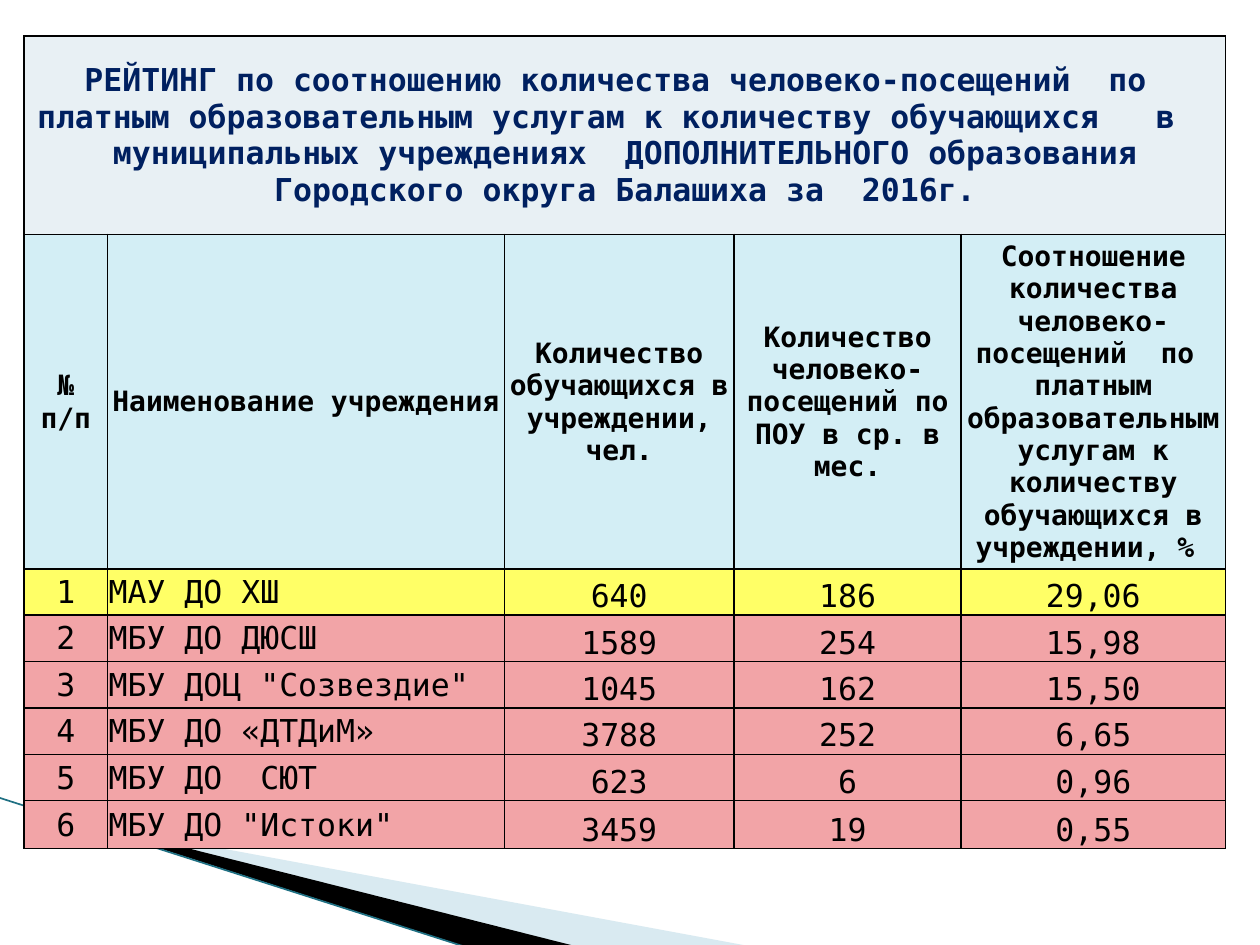
"""Builds the rating slide for paid services in supplementary education."""
from dataclasses import dataclass

from lxml import etree
from pptx import Presentation
from pptx.dml.color import RGBColor
from pptx.enum import shapes, text
from pptx.oxml import ns
from pptx.util import Emu, Inches, Pt

FONT = "DejaVu Sans Mono"
BLACK, NAVY, TEAL = "000000", "002060", "1F7083"
TITLE_FILL, HEAD_FILL, LEADER_FILL, OTHER_FILL = "E8F0F4", "D3EEF5", "FFFF66", "F2A4A7"
WIDTH, HEIGHT = Inches(10), Inches(7.5)
LEFT, TOP = 1.92, 3.8
COLUMNS = (6.6, 31.5, 18.25, 18, 21)
TITLE_ROW, HEAD_ROW, RATING_ROW, LAST_ROW = 21, 35.4, 4.91, 5.05

TITLE = ("РЕЙТИНГ по соотношению количества человеко-посещений  по  платным "
         "образовательным услугам к количеству обучающихся   в   муниципальных "
         "учреждениях  ДОПОЛНИТЕЛЬНОГО образования Городского округа Балашиха за  2016г.")
HEADINGS = (
    "№ п/п",
    "Наименование учреждения",
    "Количество обучающихся в учреждении, чел.",
    "Количество человеко-посещений по ПОУ в ср. в мес.",
    "Соотношение количества человеко-посещений  по  платным образовательным "
    "услугам к количеству обучающихся в учреждении, % ",
)


@dataclass(frozen=True)
class Institution:
    name: str
    students: str
    visits: str
    ratio: str


@dataclass(frozen=True)
class Wedge:
    points: tuple
    frame: tuple
    fill: str
    opacity: int = 100


@dataclass(frozen=True)
class CellStyle:
    fill: str
    size: int
    color: str = BLACK
    bold: bool = False
    align: text.PP_ALIGN = text.PP_ALIGN.CENTER
    anchor: text.MSO_ANCHOR = text.MSO_ANCHOR.MIDDLE


INSTITUTIONS = (
    Institution("МАУ ДО ХШ", "640", "186", "29,06"),
    Institution("МБУ ДО ДЮСШ", "1589", "254", "15,98"),
    Institution('МБУ ДОЦ "Созвездие"', "1045", "162", "15,50"),
    Institution("МБУ ДО «ДТДиМ»", "3788", "252", "6,65"),
    Institution("МБУ ДО  СЮТ", "623", "6", "0,96"),
    Institution('МБУ ДО "Истоки"', "3459", "19", "0,55"),
)
WEDGES = (
    Wedge(((5.5, 86.8), (59.5, 100.13), (45.6, 100.13), (5.5, 86.67)),
          (7.8, 72.93, 41.6, 21.07), "A0CBDC", 40),
    Wedge(((5.3, 86.53), (45.7, 100.13), (37.2, 100.27), (5.4, 86.67)),
          (-0.6, 84.4, 41.6, 12.27), BLACK),
)


def across(percent: float) -> Emu:
    """Turn a percentage of the slide width into a length."""
    return Emu(round(WIDTH * percent / 100))


def down(percent: float) -> Emu:
    """Turn a percentage of the slide height into a length."""
    return Emu(round(HEIGHT * percent / 100))


def paint(color_format, color: str) -> None:
    """Apply a hex colour to a fill, line or font colour."""
    color_format.rgb = RGBColor.from_string(color)


def set_frame(ray, frame: tuple) -> None:
    """Give a freeform another frame while its outline stays in place."""
    left, top, width, height = (
        measure(share) for measure, share in zip((across, down, across, down), frame))
    outline = ray._element.find(".//" + ns.qn("a:path"))
    for point in outline.iter(ns.qn("a:pt")):
        point.set("x", str(int(point.get("x")) + ray.left - left))
        point.set("y", str(int(point.get("y")) + ray.top - top))
    outline.set("w", str(width))
    outline.set("h", str(height))
    ray.left, ray.top, ray.width, ray.height = left, top, width, height


def draw_wedge(slide, wedge: Wedge) -> None:
    """Draw one filled ray of the background."""
    start, *rest = [(across(x), down(y)) for x, y in wedge.points]
    builder = slide.shapes.build_freeform(*start, scale=1.0)
    builder.add_line_segments(rest, close=True)
    ray = builder.convert_to_shape()
    set_frame(ray, wedge.frame)
    ray.shadow.inherit = False
    ray.line.fill.background()
    ray.fill.solid()
    paint(ray.fill.fore_color, wedge.fill)
    if wedge.opacity < 100:
        tint = ray.fill._xPr.find(".//" + ns.qn("a:srgbClr"))
        etree.SubElement(tint, ns.qn("a:alpha"), val=str(wedge.opacity * 1000))


def draw_edge(slide) -> None:
    """Draw the thin slanting line along the rays."""
    edge = slide.shapes.add_connector(
        shapes.MSO_CONNECTOR.STRAIGHT, across(-0.1), down(84.4), across(37.1), down(100.27))
    edge.line.width = Pt(0.95)
    paint(edge.line.color, TEAL)
    etree.SubElement(edge._element.spPr, ns.qn("a:effectLst"))


def style_cell(cell, style: CellStyle) -> None:
    """Give a cell its borders, fill, margins and anchor."""
    properties = cell._tc.get_or_add_tcPr()
    for side in ("lnL", "lnR", "lnT", "lnB"):
        border = etree.SubElement(properties, ns.qn(f"a:{side}"), w=str(Pt(1)))
        solid = etree.SubElement(border, ns.qn("a:solidFill"))
        etree.SubElement(solid, ns.qn("a:srgbClr"), val=BLACK)
    cell.fill.solid()
    paint(cell.fill.fore_color, style.fill)
    cell.margin_left = cell.margin_right = cell.margin_top = across(0.1)
    cell.margin_bottom = 0
    cell.vertical_anchor = style.anchor


def write_cell(cell, wording: str, style: CellStyle) -> None:
    """Style a cell and put one run of text in it."""
    style_cell(cell, style)
    paragraph = cell.text_frame.paragraphs[0]
    paragraph.alignment = style.align
    run = paragraph.add_run()
    run.text = wording
    run.font.name, run.font.size, run.font.bold = FONT, Pt(style.size), style.bold
    paint(run.font.color, style.color)


def draw_rating(slide) -> None:
    """Draw the rating table with its title, headings and institutions."""
    rows = (TITLE_ROW, HEAD_ROW, *[RATING_ROW] * (len(INSTITUTIONS) - 1), LAST_ROW)
    rating = slide.shapes.add_table(
        len(rows), len(COLUMNS), across(LEFT), down(TOP),
        across(sum(COLUMNS)), down(sum(rows))).table
    for column, share in zip(rating.columns, COLUMNS):
        column.width = across(share)
    for row, share in zip(rating.rows, rows):
        row.height = down(share)

    title_style = CellStyle(TITLE_FILL, 18, NAVY, bold=True)
    title, *spanned = rating.rows[0].cells
    title.merge(spanned[-1])
    write_cell(title, TITLE, title_style)
    for cell in spanned:
        style_cell(cell, title_style)

    for cell, heading in zip(rating.rows[1].cells, HEADINGS):
        write_cell(cell, heading, CellStyle(HEAD_FILL, 16, bold=True))

    for place, school in enumerate(INSTITUTIONS, start=1):
        fill = LEADER_FILL if place == 1 else OTHER_FILL
        number, name, *figures = rating.rows[place + 1].cells
        write_cell(number, str(place), CellStyle(fill, 18))
        write_cell(name, school.name, CellStyle(fill, 18, align=text.PP_ALIGN.LEFT))
        for cell, figure in zip(figures, (school.students, school.visits, school.ratio)):
            write_cell(cell, figure, CellStyle(fill, 18, anchor=text.MSO_ANCHOR.BOTTOM))


def main() -> None:
    """Build and save the slide."""
    deck = Presentation()
    deck.slide_width, deck.slide_height = WIDTH, HEIGHT
    slide = deck.slides.add_slide(deck.slide_layouts[6])
    for wedge in WEDGES:
        draw_wedge(slide, wedge)
    draw_edge(slide)
    draw_rating(slide)
    deck.save("out.pptx")


if __name__ == "__main__":
    main()
